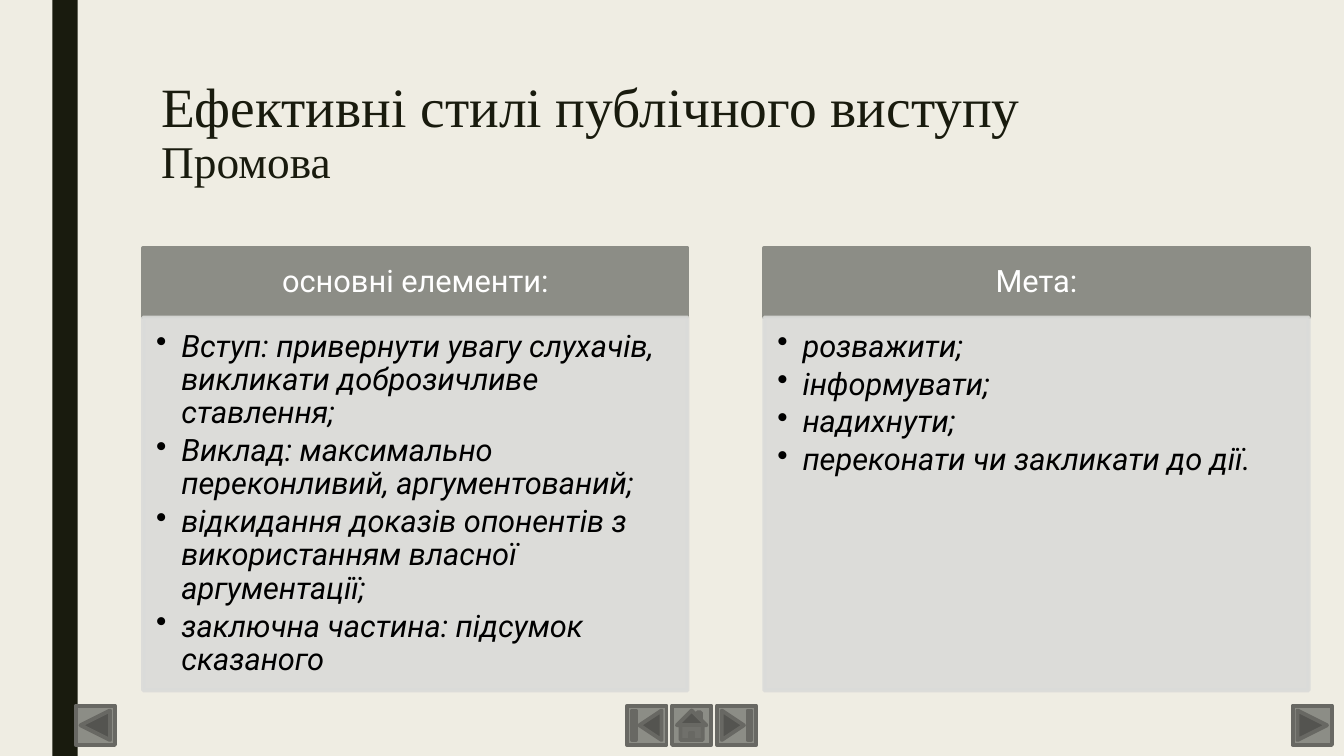
"""Build a slide on the speech as a style of public speaking."""
from dataclasses import dataclass

from lxml.etree import SubElement
from pptx import Presentation
from pptx.dml.color import RGBColor
from pptx.enum.shapes import MSO_SHAPE as Preset
from pptx.enum.text import MSO_ANCHOR as Anchor, PP_ALIGN as Align
from pptx.oxml.ns import qn
from pptx.util import Inches, Pt

TITLE = ("Ефективні стилі публічного виступу", "Промова")
PANELS = [
    ("основні елементи:", [
        "Вступ: привернути увагу слухачів, викликати доброзичливе ставлення;",
        "Виклад: максимально переконливий, аргументований;",
        "відкидання доказів опонентів з використанням власної аргументації;",
        "заключна частина: підсумок сказаного",
    ]),
    ("Мета:", [
        "розважити;",
        "інформувати;",
        "надихнути;",
        "переконати чи закликати до дії.",
    ]),
]
SIDE_BUTTONS = [
    (Preset.ACTION_BUTTON_BACK_OR_PREVIOUS, 0.75),
    (Preset.ACTION_BUTTON_FORWARD_OR_NEXT, 12.82),
]
CENTRE_BUTTONS = [
    Preset.ACTION_BUTTON_BEGINNING,
    Preset.ACTION_BUTTON_HOME,
    Preset.ACTION_BUTTON_END,
]


@dataclass(frozen=True)
class Theme:
    paper: str = "EFEDE3"
    ink: str = "191B0E"
    grey: str = "8C8D86"
    edge: str = "686863"
    pale: str = "DADBD9"
    white: str = "FFFFFF"
    black: str = "000000"
    title_font: str = "Times New Roman"
    body_font: str = "Roboto"
    title_sizes: tuple = (39.6, 32.4)
    body_size: float = 22
    line_width: float = 2.75


THEME = Theme()
WIDTH, HEIGHT = 13.33, 7.5
PANEL_LEFT, PANEL_TOP, PANEL_WIDTH, PANEL_STEP = 1.42, 2.46, 5.4, 6.16
HEADER_HEIGHT, BODY_HEIGHT = 0.69, 3.7
BUTTON_TOP, BUTTON_SIZE, BUTTON_STEP = 7, 0.39, 0.445
CENTRE_LEFT = 6.22


def add_box(slide, preset, box, fill, line=None, opacity=100):
    shape = slide.shapes.add_shape(preset, *map(Inches, box))
    shape.shadow.inherit = False
    shape.fill.solid()
    shape.fill.fore_color.rgb = RGBColor.from_string(fill)
    if line:
        shape.line.color.rgb = RGBColor.from_string(line)
        shape.line.width = Pt(THEME.line_width)
    else:
        shape.line.fill.background()
    if opacity < 100:
        for color in shape.element.spPr.iter(qn("a:srgbClr")):
            SubElement(color, qn("a:alpha"), val=str(opacity * 1000))
    return shape


def set_frame(frame, insets, anchor):
    frame.word_wrap = True
    frame.vertical_anchor = anchor
    (frame.margin_left, frame.margin_top,
     frame.margin_right, frame.margin_bottom) = map(Inches, insets)


def style(run, font, size, color, italic=False):
    run.font.name = font
    run.font.size = Pt(size)
    run.font.color.rgb = RGBColor.from_string(color)
    run.font.italic = italic


def add_bullet(paragraph):
    properties = paragraph._p.get_or_add_pPr()
    properties.set("marL", str(Inches(0.25)))
    properties.set("indent", str(-Inches(0.25)))
    SubElement(properties, qn("a:buChar"), char="•")


def add_title(slide):
    box = slide.shapes.add_textbox(*map(Inches, (1.5, 0.75, 10.5, 1.62)))
    set_frame(box.text_frame, (0.1, 0.05, 0.1, 0.05), Anchor.TOP)
    paragraph = box.text_frame.paragraphs[0]
    paragraph.text = "\v".join(TITLE)
    paragraph.line_spacing = 0.89
    for run, size in zip(paragraph.runs, THEME.title_sizes):
        style(run, THEME.title_font, size, THEME.ink)


def add_panel(slide, left, heading, items):
    header = add_box(slide, Preset.RECTANGLE,
                     (left, PANEL_TOP, PANEL_WIDTH, HEADER_HEIGHT), THEME.grey, THEME.grey)
    set_frame(header.text_frame, (0.17, 0.1, 0.17, 0.1), Anchor.MIDDLE)
    paragraph = header.text_frame.paragraphs[0]
    paragraph.text = heading
    paragraph.alignment = Align.CENTER
    paragraph.line_spacing = 0.9
    style(paragraph.runs[0], THEME.body_font, THEME.body_size, THEME.white)

    body = add_box(slide, Preset.RECTANGLE,
                   (left, PANEL_TOP + HEADER_HEIGHT, PANEL_WIDTH, BODY_HEIGHT),
                   THEME.pale, THEME.pale, opacity=90)
    set_frame(body.text_frame, (0.13, 0.13, 0.17, 0.19), Anchor.TOP)
    body.text_frame.text = "\n".join(items)
    for paragraph in body.text_frame.paragraphs:
        paragraph.alignment = Align.LEFT
        paragraph.line_spacing = 0.9
        paragraph.space_after = Pt(0.15 * THEME.body_size)
        add_bullet(paragraph)
        style(paragraph.runs[0], THEME.body_font, THEME.body_size, THEME.black, italic=True)


def main():
    presentation = Presentation()
    presentation.slide_width, presentation.slide_height = Inches(WIDTH), Inches(HEIGHT)
    slide = presentation.slides.add_slide(presentation.slide_layouts[6])
    slide.background.fill.solid()
    slide.background.fill.fore_color.rgb = RGBColor.from_string(THEME.paper)

    add_box(slide, Preset.RECTANGLE, (0.52, 0, 0.25, HEIGHT), THEME.ink)
    add_title(slide)
    for column, (heading, items) in enumerate(PANELS):
        add_panel(slide, PANEL_LEFT + column * PANEL_STEP, heading, items)

    centre = [(preset, CENTRE_LEFT + i * BUTTON_STEP) for i, preset in enumerate(CENTRE_BUTTONS)]
    for preset, left in SIDE_BUTTONS + centre:
        add_box(slide, preset, (left, BUTTON_TOP, BUTTON_SIZE, BUTTON_SIZE),
                THEME.grey, THEME.edge)
    presentation.save("out.pptx")


if __name__ == "__main__":
    main()
